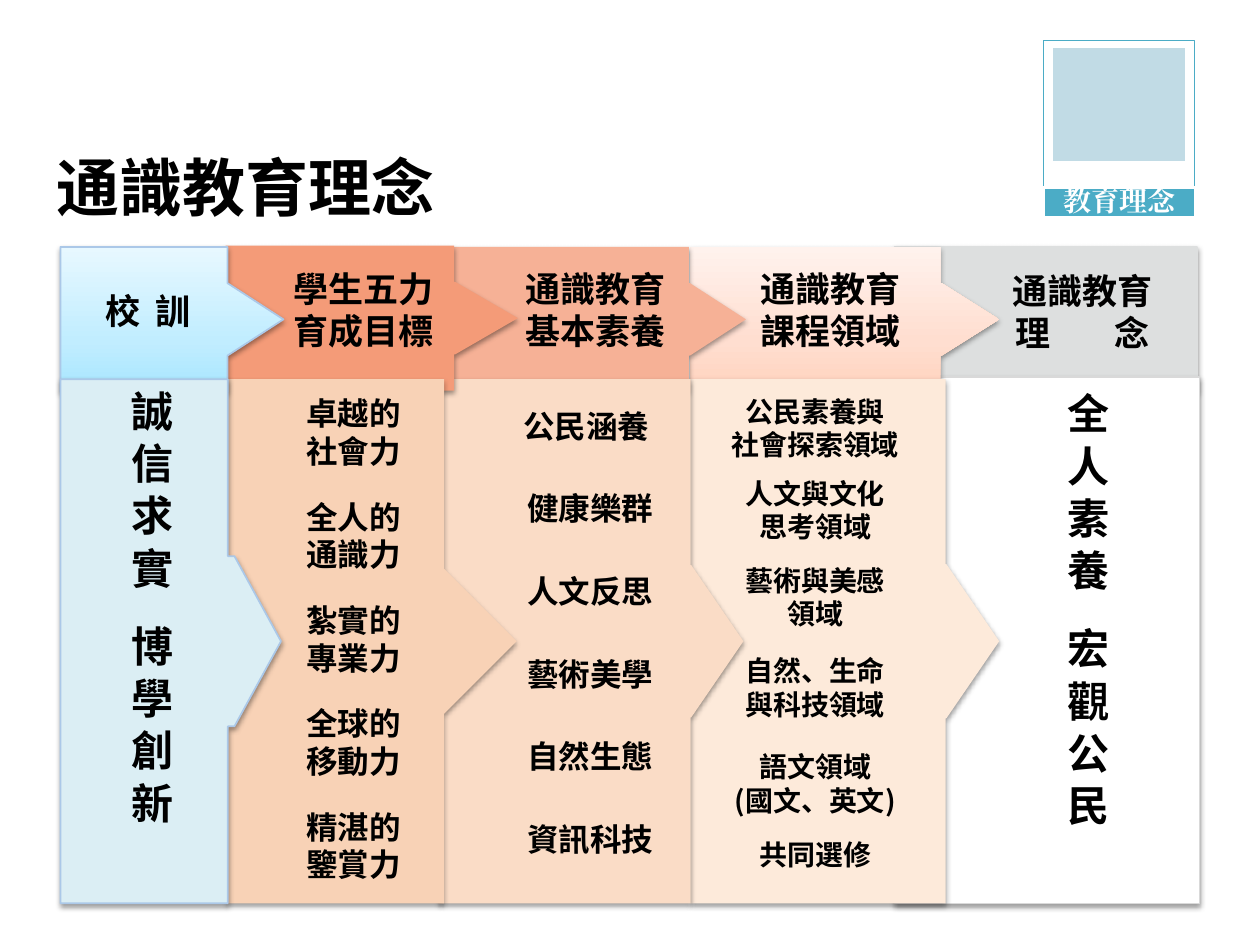
from copy import deepcopy

from lxml import etree
from pptx import Presentation
from pptx.dml.color import RGBColor
from pptx.enum.shapes import MSO_SHAPE as Shape
from pptx.enum.text import MSO_ANCHOR as Anchor, MSO_AUTO_SIZE as AutoSize, PP_ALIGN as Align
from pptx.oxml.ns import qn
from pptx.util import Inches, Pt

COLORS = {
    "text": "000000", "white": "FFFFFF", "grey": "DDDFDF", "frame": "D9D9D9",
    "peach": ["FFD2BD", "FFDED0", "FFF2ED"], "peach_body": "FDEADA",
    "salmon": "F6B196", "salmon_body": "FADCC6",
    "orange": "F49B78", "orange_body": "F8D2B6",
    "sky": ["A7E6FF", "C1EDFF", "E7F8FF"], "sky_body": "DBEEF4",
    "sky_line": "ABC8E8", "teal": "4BACC6", "pale_teal": "C1DBE5",
}


class SlideBuilder:
    font = "Noto Sans CJK TC"

    def __init__(self, slide):
        self.slide = slide

    def color(self, name):
        return RGBColor.from_string(COLORS[name])

    def box(self, place, fill, line=None, width=1, adj=None, shadow=True, alpha=None):
        """A rectangle, or an arrow callout when adjustments are given."""
        kind = Shape.RIGHT_ARROW_CALLOUT if adj else Shape.RECTANGLE
        shape = self.slide.shapes.add_shape(kind, *map(Inches, place))
        for i, value in enumerate(adj or []):
            shape.adjustments[i] = value
        if isinstance(COLORS[fill], list):
            self.gradient(shape, COLORS[fill])
        else:
            shape.fill.solid()
            shape.fill.fore_color.rgb = self.color(fill)
        if line:
            shape.line.color.rgb = self.color(line)
            shape.line.width = Pt(width)
        else:
            shape.line.fill.background()
        shape.shadow.inherit = False
        props = shape._element.spPr
        if shadow:
            outer = etree.SubElement(props.find(qn("a:effectLst")), qn("a:outerShdw"),
                                     blurRad=str(Pt(3.1)), dist=str(Pt(1.6)),
                                     dir="5400000", rotWithShape="0")
            black = etree.SubElement(outer, qn("a:srgbClr"), val="000000")
            etree.SubElement(black, qn("a:alpha"), val="38000")
        if alpha:
            tint = props.find(qn("a:solidFill"))[0]
            etree.SubElement(tint, qn("a:alpha"), val=str(alpha * 1000))
        return shape

    def gradient(self, shape, hexes):
        shape.fill.gradient()
        shape.fill.gradient_angle = 90
        stops = shape._element.spPr.find(".//" + qn("a:gsLst"))
        stops.append(deepcopy(stops[0]))
        for stop, position, value in zip(shape.fill.gradient_stops, (0, 0.35, 1), hexes):
            stop.position = position
            stop.color.rgb = RGBColor.from_string(value)

    def fill_text(self, frame, lines, size, color="text", font=None, align=Align.CENTER, gap=0):
        """One paragraph a line; runs that are a single space are widened by gap points."""
        frame.word_wrap = True
        for i, runs in enumerate(lines):
            paragraph = frame.paragraphs[0] if i == 0 else frame.add_paragraph()
            paragraph.alignment = align
            for text in [runs] if isinstance(runs, str) else runs:
                run = paragraph.add_run()
                run.text = text
                run.font.size = Pt(size)
                run.font.bold = True
                run.font.color.rgb = self.color(color)
                run.font.name = font or self.font
                props = run.font._element
                props.find(qn("a:latin")).addnext(
                    etree.Element(qn("a:ea"), typeface=font or self.font))
                if text == " ":
                    props.set("spc", str(round(gap * 100)))

    def label(self, place, lines, size, vertical=False, **style):
        frame = self.slide.shapes.add_textbox(*map(Inches, place)).text_frame
        if vertical:
            frame._txBody.bodyPr.set("vert", "eaVert")
            style["align"] = Align.LEFT
        self.fill_text(frame, lines, size, **style)

    def title(self, place, text):
        title = self.slide.shapes.title
        title.left, title.top, title.width, title.height = map(Inches, place)
        title.text_frame.vertical_anchor = Anchor.TOP
        title.text_frame.auto_size = AutoSize.NONE
        self.fill_text(title.text_frame, [text], 36, font="Noto Sans CJK SC", align=Align.LEFT)


def main():
    prs = Presentation()
    prs.slide_width, prs.slide_height = Inches(10), Inches(7.5)
    page = SlideBuilder(prs.slides.add_slide(prs.slide_layouts[5]))
    page.title((0.35, 1.13, 6.59, 0.71), "通識教育理念")

    head_top, head_height = 1.96, 1.15
    body_top, body_height = 3.01, 4.16

    # Columns run right to left, so that each arrow overlaps the next column
    # Outcome column
    page.box((7.1, head_top, 2.4, head_height), "grey", "grey")
    page.label((7.91, 2.09, 1.37, 0.77), ["通識教育", ("理", " ", "念")], 20, gap=32)
    page.box((7.1, 2.99, 2.42, 4.18), "white", "frame")
    page.label((8.27, 3.02, 0.61, 4.15), [("全 人 素 養", " ", "宏 觀 公 民")], 24,
               vertical=True, gap=16.5)

    # Course areas
    page.box((5.48, head_top, 2.45, head_height), "peach", adj=(0.5, 0.25, 0.396, 0.81))
    page.label((5.72, 2.07, 1.75, 0.77), ["通識教育", "課程領域"], 20)
    page.box((5.48, body_top, 2.45, body_height), "peach_body", adj=(0.5, 0.25, 0.171, 0.827))
    areas = [
        (3.08, ["公民素養與", "社會探索領域"]),
        (3.73, ["人文與文化", "思考領域"]),
        (4.42, ["藝術與美感", "領域"]),
        (5.14, ["自然、生命", "與科技領域"]),
        (5.9, ["語文領域", "(國文、英文)"]),
        (6.6, ["共同選修"]),
    ]
    for top, area in areas:
        page.label((5.48, top, 1.98, 0.1 + 0.27 * len(area)), area, 16)

    # Basic literacies
    page.box((3.6, head_top, 2.32, head_height), "salmon", adj=(0.5, 0.25, 0.386, 0.805))
    page.label((3.84, 2.07, 1.77, 0.77), ["通識教育", "基本素養"], 20)
    page.box((3.48, body_top, 2.42, body_height), "salmon_body", adj=(0.5, 0.25, 0.171, 0.827))
    literacies = ["公民涵養", "健康樂群", "人文反思", "藝術美學", "自然生態", "資訊科技"]
    for i, literacy in enumerate(literacies):
        left = 3.8 if i else 3.77
        page.label((left, 3.18 + 0.656 * i, 1.77, 0.4), [literacy], 18)

    # Five student strengths
    page.box((1.79, 1.95, 2.32, head_height), "orange", adj=(0.5, 0.25, 0.432, 0.782))
    page.label((2.14, 2.07, 1.49, 0.77), ["學生五力", "育成目標"], 20)
    page.box((1.8, body_top, 2.3, body_height), "orange_body", adj=(0.25, 0.25, 0.25, 0.755))
    strengths = [("卓越的", "社會力"), ("全人的", "通識力"), ("紮實的", "專業力"),
                 ("全球的", "移動力"), ("精湛的", "鑒賞力")]
    for i, strength in enumerate(strengths):
        page.label((2.06, 3.08 + 0.82 * i, 1.49, 0.71), strength, 18)

    # School motto
    page.box((0.48, head_top, 1.77, head_height), "sky", "sky_line", adj=(0.5, 0.25, 0.386, 0.75))
    page.label((0.68, 2.25, 0.99, 0.44), [("校", " ", "訓")], 20, gap=4.5)
    page.box((0.48, body_top, 1.75, body_height), "sky_body", "sky_line",
             adj=(0.772, 0.386, 0.211, 0.759))
    page.label((0.84, 3, 0.61, 4.17), [("誠 信 求 實", " ", "博 學 創 新")], 24,
               vertical=True, gap=16.5)

    # Section badge
    page.box((8.28, 0.32, 1.2, 1.42), "white", "teal", 0.75, shadow=False, alpha=40)
    page.box((8.34, 0.37, 1.08, 0.92), "pale_teal", "white", 2, shadow=False)
    badge = page.box((8.28, 1.49, 1.21, 0.24), "teal", "white", 2, shadow=False).text_frame
    badge.margin_left = badge.margin_right = Inches(0.07)
    badge.margin_top = badge.margin_bottom = Inches(0.07)
    badge.vertical_anchor = Anchor.MIDDLE
    page.fill_text(badge, ["教育理念"], 16, color="white", font="Times New Roman")
    badge.paragraphs[0].line_spacing = 0.9

    prs.save("out.pptx")


if __name__ == "__main__":
    main()
